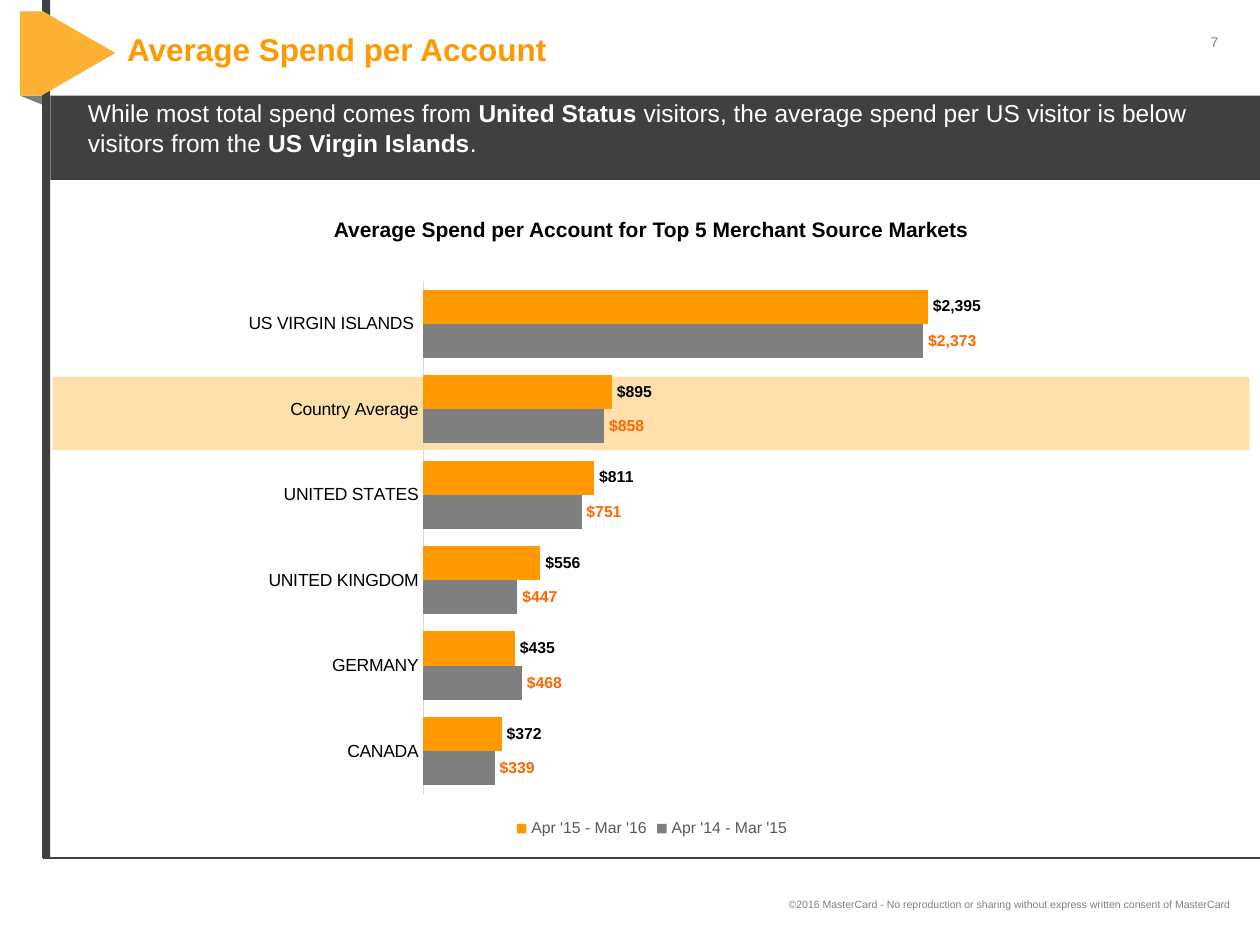
from lxml import etree
from pptx import Presentation
from pptx.chart.data import CategoryChartData
from pptx.dml.color import RGBColor
from pptx.enum import chart as charts, shapes, text
from pptx.util import Pt

COLORS = {
    "orange": "FF9900", "arrow": "FCB133", "band": "FEE0AD", "dark": "404040",
    "gray": "808080", "bar": "7F7F7F", "axis": "D9D9D9", "legend": "595959",
    "label": "FF6600", "black": "000000", "white": "FFFFFF",
}
FONT = "Arial"
LEFT, CENTER, RIGHT = (text.PP_ALIGN.LEFT, text.PP_ALIGN.CENTER, text.PP_ALIGN.RIGHT)
TOP, MIDDLE = text.MSO_ANCHOR.TOP, text.MSO_ANCHOR.MIDDLE

# Content: runs are (wording, bold)
TEXTS = [
    dict(runs=[("7", False)], at=(681.8, 15.8, 24.5, 17.3),
         size=8, color="gray", align=CENTER, wrap=False),
    dict(runs=[("©2016 MasterCard - No reproduction or sharing without express "
                "written consent of MasterCard", False)],
         at=(7.9, 497.5, 702, 38.9), size=6, color="gray", align=RIGHT, anchor=MIDDLE),
    dict(runs=[("While most total spend comes from ", False), ("United Status ", True),
               ("visitors, the average spend per US visitor is below visitors from the ", False),
               ("US Virgin Islands", True), (".", False)],
         at=(43.2, 52.6, 669.6, 47.5), size=14, color="white"),
    dict(runs=[("Average Spend per Account", True)], at=(65.5, 6.5, 570.2, 48.2),
         size=18, color="orange", anchor=MIDDLE, spacing=16),
    dict(runs=[("Average Spend per Account for Top 5 Merchant Source Markets", True)],
         at=(168.5, 123.8, 407.5, 14.4), size=12, color="black", align=CENTER, inset=0),
]
MARKETS = ["CANADA", "GERMANY", "UNITED KINGDOM", "UNITED STATES",
           "Country Average", "US VIRGIN ISLANDS "]
PERIODS = [  # name, spend, bar color, label color
    ("Apr '14 - Mar '15", (339, 468, 447, 751, 858, 2373), "bar", "label"),
    ("Apr '15 - Mar '16", (372, 435, 556, 811, 895, 2395), "orange", "black"),
]
DOLLARS = '"$"#,##0'
RECT, TRIANGLE = shapes.MSO_SHAPE.RECTANGLE, shapes.MSO_SHAPE.ISOSCELES_TRIANGLE
FOLD = [(11.5, 54.7), (24.1, 54.7), (24.1, 59.8)]
BLOCKS = [  # preset, place, color, rotation
    (RECT, (24.1, 0, 4.5, 490.3), "dark", 0),
    (TRIANGLE, (20.9, 9.4, 48.2, 41.8), "arrow", 90),
    (RECT, (11.5, 6.5, 12.6, 48.2), "arrow", 0),
    (RECT, (30.2, 215.3, 684, 41.8), "band", 0),
    (RECT, (28.8, 54.7, 691.2, 48.2), "dark", 0),
]


def rgb(name):
    return RGBColor.from_string(COLORS[name])


def style_font(font, size, color, bold=False):
    for key, value in dict(name=FONT, size=Pt(size), bold=bold).items():
        setattr(font, key, value)
    font.color.rgb = rgb(color)


def paint(shape, color):
    shape.shadow.inherit = False
    shape.fill.solid()
    shape.fill.fore_color.rgb = rgb(color)
    shape.line.fill.background()


def add_text(slide, runs, at, size, color, align=LEFT, anchor=TOP,
             wrap=True, spacing=None, inset=None):
    frame = slide.shapes.add_textbox(*map(Pt, at)).text_frame
    frame.word_wrap, frame.vertical_anchor = wrap, anchor
    if inset is not None:
        for side in ("left", "top", "right", "bottom"):
            setattr(frame, f"margin_{side}", Pt(inset))
    paragraph = frame.paragraphs[0]
    paragraph.alignment = align
    if spacing:
        paragraph.line_spacing = Pt(spacing)
    for wording, bold in runs:
        run = paragraph.add_run()
        run.text = wording
        style_font(run.font, size, color, bold)


def add_spend_chart(slide):
    data = CategoryChartData(number_format=DOLLARS)
    data.categories = MARKETS
    for name, spend, *_ in PERIODS:
        data.add_series(name, spend)
    chart = slide.shapes.add_chart(charts.XL_CHART_TYPE.BAR_CLUSTERED,
                                   *map(Pt, (132.5, 154.1, 480.2, 327.6)), data).chart
    style_font(chart.font, 10, "black")
    chart.has_title = False
    chart.has_legend = True
    chart.legend.position = charts.XL_LEGEND_POSITION.BOTTOM
    chart.legend.include_in_layout = False
    style_font(chart.legend.font, 9, "legend")

    # Axes
    markets, dollars = chart.category_axis, chart.value_axis
    markets.major_tick_mark = charts.XL_TICK_MARK.NONE
    markets.format.line.color.rgb = rgb("axis")
    markets.format.line.width = Pt(0.75)
    style_font(markets.tick_labels.font, 10, "black")
    dollars.visible = dollars.has_major_gridlines = False
    dollars.minimum_scale, dollars.maximum_scale = 0, 3000

    # Bars and their labels
    plot = chart.plots[0]
    plot.gap_width, plot.overlap, plot.vary_by_categories = 50, 0, False
    for series, (_, _, bar_color, label_color) in zip(plot.series, PERIODS):
        series.format.fill.solid()
        series.format.fill.fore_color.rgb = rgb(bar_color)
        labels = series.data_labels
        for key, value in dict(show_value=True, number_format=DOLLARS,
                               number_format_is_linked=False,
                               position=charts.XL_LABEL_POSITION.OUTSIDE_END).items():
            setattr(labels, key, value)
        style_font(labels.font, 9, label_color, True)


def main():
    deck = Presentation()
    deck.slide_width, deck.slide_height = Pt(720), Pt(540)
    slide = deck.slides.add_slide(deck.slide_layouts[6])

    # Fold under the arrow, then arrow, side bar and bands
    outline = slide.shapes.build_freeform(Pt(FOLD[0][0]), Pt(FOLD[0][1]))
    outline.add_line_segments([(Pt(x), Pt(y)) for x, y in FOLD[1:]])
    paint(outline.convert_to_shape(), "gray")
    for preset, at, color, rotation in BLOCKS:
        block = slide.shapes.add_shape(preset, *map(Pt, at))
        block.rotation = rotation
        paint(block, color)

    # Footer rule
    rule = slide.shapes.add_connector(shapes.MSO_CONNECTOR.STRAIGHT,
                                      *map(Pt, (24.5, 490.3, 720, 490.3)))
    rule.line.color.rgb = rgb("dark")
    rule.line.width = Pt(0.75)
    etree.SubElement(rule._element.spPr,
                     "{http://schemas.openxmlformats.org/drawingml/2006/main}effectLst")

    for item in TEXTS:
        add_text(slide, **item)
    add_spend_chart(slide)
    deck.save("out.pptx")


if __name__ == "__main__":
    main()
